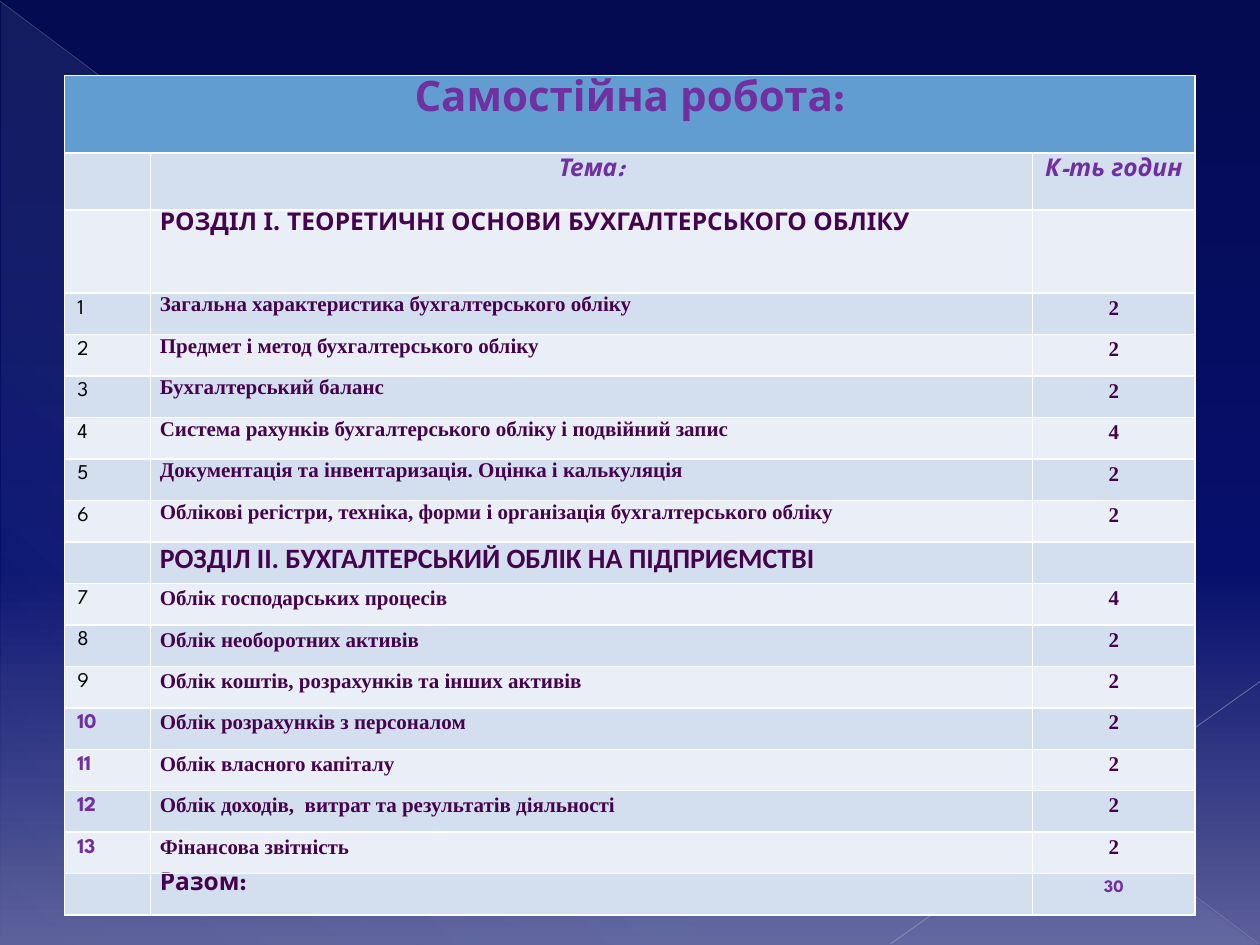
from lxml.etree import SubElement
from pptx import Presentation
from pptx.dml.color import RGBColor
from pptx.enum.shapes import MSO_CONNECTOR, MSO_SHAPE
from pptx.enum.text import PP_ALIGN
from pptx.oxml.ns import qn
from pptx.util import Pt

WIDTH, HEIGHT = 720, 540
PURPLE, PLUM, BLACK, WHITE = "7030A0", "46034D", "000000", "FFFFFF"
HEADER_BLUE, BANDS = "629DD1", ("D3DFEE", "EAEFF7")
DISPLAY, SERIF, SANS = "League Spartan", "Times New Roman", "Calibri"
COLUMN_WIDTHS = (49, 504, 93)
HEADING_HEIGHTS, TOPIC_HEIGHT = (44.3, 32.6, 47.4), 23.7

SECTION_1 = "РОЗДІЛ І. ТЕОРЕТИЧНІ ОСНОВИ БУХГАЛТЕРСЬКОГО ОБЛІКУ"
SECTION_2 = "РОЗДІЛ ІІ. БУХГАЛТЕРСЬКИЙ ОБЛІК НА ПІДПРИЄМСТВІ"
THEORY_TOPICS = [
    ("Загальна характеристика бухгалтерського обліку", 2),
    ("Предмет і метод бухгалтерського обліку", 2),
    ("Бухгалтерський баланс", 2),
    ("Система рахунків бухгалтерського обліку і подвійний запис", 4),
    ("Документація та інвентаризація. Оцінка і калькуляція", 2),
    ("Облікові регістри, техніка, форми і організація бухгалтерського обліку", 2),
]
PRACTICE_TOPICS = [
    ("Облік господарських процесів", 4),
    ("Облік необоротних активів", 2),
    ("Облік коштів, розрахунків та інших активів", 2),
    ("Облік розрахунків з персоналом", 2),
    ("Облік власного капіталу", 2),
    ("Облік доходів,  витрат та результатів діяльності", 2),
    ("Фінансова звітність", 2),
]


def rgb(color):
    return RGBColor.from_string(color)


def add_color(parent, color, opacity=100):
    node = SubElement(parent, qn("a:srgbClr"), val=color)
    if opacity < 100:
        SubElement(node, qn("a:alpha"), val=str(opacity * 1000))


def set_gradient(owner, fill, stops, angle):
    fill.gradient()
    gradient = owner._element.find(".//" + qn("a:gradFill"))
    stop_list = gradient.find(qn("a:gsLst"))
    for default_stop in list(stop_list):
        stop_list.remove(default_stop)
    for position, color, opacity in stops:
        stop = SubElement(stop_list, qn("a:gs"), pos=str(position * 1000))
        add_color(stop, color, opacity)
    gradient.find(qn("a:lin")).set("ang", str(angle * 60000))


def add_ray(slide, start, end, color, width, opacity):
    ray = slide.shapes.add_connector(MSO_CONNECTOR.STRAIGHT, *map(Pt, start + end))
    ray.line.width = Pt(width)
    ray.line.color.rgb = rgb(color)
    tint = ray.line._ln.find(".//" + qn("a:srgbClr"))
    SubElement(tint, qn("a:alpha"), val=str(opacity * 1000))
    SubElement(ray._element.spPr, qn("a:effectLst"))


def draw_backdrop(slide, left, top, width, height):
    set_gradient(slide, slide.background.fill,
                 [(0, "040B51", 100), (60, "060F6C", 100), (100, "5C5F99", 100)], 90)
    # Pale triangle below the diagonal
    glow = slide.shapes.add_shape(MSO_SHAPE.RIGHT_TRIANGLE, Pt(left + 0.7), Pt(top + 1.4),
                                  Pt(width - 1.4), Pt(height - 1.4))
    glow.shadow.inherit = False
    glow.line.fill.background()
    set_gradient(glow, glow.fill,
                 [(0, "ACCBF9", 10), (70, "ACCBF9", 8), (100, "ACCBF9", 1)], 133)
    # Thin rays
    right, bottom = left + width, top + height
    add_ray(slide, (left, top + 0.7), (right - 0.7, bottom - 0.7), "B2B3BE", 0.39, 35)
    add_ray(slide, (right, top + 389.5), (right - 211, bottom - 0.7), "BBBCC5", 0.47, 45)


def write(cell, text, *, size=12, font=SERIF, color=PLUM, bold=True, italic=False,
          align=PP_ALIGN.LEFT, spacing=None, tight=True):
    if tight:
        cell.margin_left = cell.margin_right = Pt(5.4)
        cell.margin_top = cell.margin_bottom = 0
    paragraph = cell.text_frame.paragraphs[0]
    paragraph.alignment = align
    if spacing:
        paragraph.line_spacing = spacing
    if text:
        run = paragraph.add_run()
        run.text = text
        run.font.size, run.font.name = Pt(size), font
        run.font.bold, run.font.italic = bold, italic
        run.font.color.rgb = rgb(color)


def paint(cell, color):
    properties = cell._tc.get_or_add_tcPr()
    for side in ("lnL", "lnR", "lnT", "lnB"):
        border = SubElement(properties, qn("a:" + side), w=str(Pt(1)))
        add_color(SubElement(border, qn("a:solidFill")), WHITE)
    cell.fill.solid()
    cell.fill.fore_color.rgb = rgb(color)


def fill_topics(table, first_row, first_number, topics, spacing=None):
    for offset, (topic, hours) in enumerate(topics):
        number_cell, topic_cell, hours_cell = table.rows[first_row + offset].cells
        number = first_number + offset
        late = number >= 10
        write(number_cell, str(number), font=DISPLAY, color=PURPLE if late else BLACK,
              bold=late, tight=False)
        write(topic_cell, topic, spacing=spacing)
        write(hours_cell, str(hours), align=PP_ALIGN.CENTER, spacing=1.15)


def fill_heading(table, row, text, **style):
    number_cell, heading_cell, hours_cell = table.rows[row].cells
    write(number_cell, "")
    write(heading_cell, text, **style)
    write(hours_cell, "")


def draw_hours_table(slide, left, top):
    section_2_row = len(HEADING_HEIGHTS) + len(THEORY_TOPICS)
    total_row = section_2_row + len(PRACTICE_TOPICS) + 1
    heights = list(HEADING_HEIGHTS)
    heights += [TOPIC_HEIGHT] * (total_row + 1 - len(heights))
    table = slide.shapes.add_table(len(heights), len(COLUMN_WIDTHS), Pt(left), Pt(top),
                                   Pt(sum(COLUMN_WIDTHS)), Pt(sum(heights))).table
    for column, width in zip(table.columns, COLUMN_WIDTHS):
        column.width = Pt(width)
    for index, (row, height) in enumerate(zip(table.rows, heights)):
        row.height = Pt(height)
        for cell in row.cells:
            paint(cell, BANDS[(index - 1) % 2] if index else HEADER_BLUE)

    # Title and column headings
    centred = dict(font=DISPLAY, color=PURPLE, align=PP_ALIGN.CENTER, tight=False)
    table.cell(0, 0).merge(table.cell(0, 2))
    write(table.cell(0, 0), "Самостійна робота:", size=24, **centred)
    write(table.cell(1, 0), "")
    for column, heading in ((1, "Тема:"), (2, "К-ть годин")):
        write(table.cell(1, column), heading, size=14, italic=True, **centred)

    # Sections and their topics
    fill_heading(table, 2, SECTION_1, size=14, font=DISPLAY, spacing=1.15)
    fill_topics(table, 3, 1, THEORY_TOPICS)
    fill_heading(table, section_2_row, SECTION_2, size=16, font=SANS)
    fill_topics(table, section_2_row + 1, len(THEORY_TOPICS) + 1, PRACTICE_TOPICS, 1.15)

    # Total
    write(table.cell(total_row, 0), "")
    write(table.cell(total_row, 1), "Разом:", size=14, font=DISPLAY)
    total = sum(hours for _, hours in THEORY_TOPICS + PRACTICE_TOPICS)
    write(table.cell(total_row, 2), str(total), size=10, **centred)


def main():
    presentation = Presentation()
    presentation.slide_width, presentation.slide_height = Pt(WIDTH), Pt(HEIGHT)
    slide = presentation.slides.add_slide(presentation.slide_layouts[6])
    draw_backdrop(slide, 0, 0, WIDTH, HEIGHT)
    draw_hours_table(slide, 37, 43.2)
    presentation.save("out.pptx")


if __name__ == "__main__":
    main()
